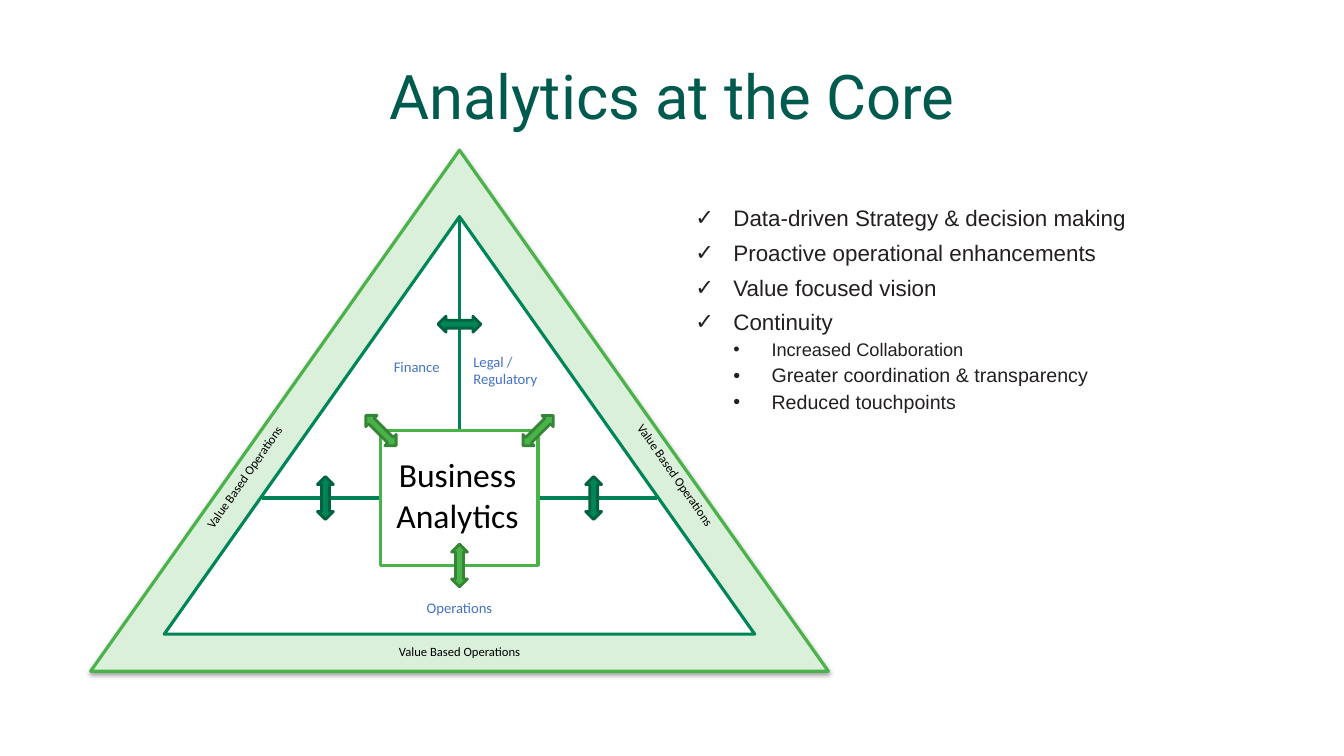
from dataclasses import dataclass

from lxml.etree import SubElement
from pptx import Presentation
from pptx.dml.color import RGBColor
from pptx.enum.shapes import MSO_CONNECTOR, MSO_SHAPE
from pptx.enum.text import MSO_ANCHOR, MSO_AUTO_SIZE, PP_ALIGN
from pptx.oxml.ns import qn
from pptx.util import Cm, Pt


@dataclass(frozen=True)
class Theme:
    """Colours, fonts and type sizes of the slide."""
    title: str = "005B4E"
    body: str = "231F20"
    black: str = "000000"
    white: str = "FFFFFF"
    label: str = "4472C4"
    pale: str = "DAF0DA"
    light: str = "49B349"
    light_edge: str = "368436"
    dark: str = "008557"
    dark_edge: str = "006240"
    divider: str = "008255"
    title_font: str = "Roboto"
    body_font: str = "Arial"
    diagram_font: str = "Calibri"
    title_size: float = 44
    point_size: float = 16
    subpoint_size: float = 14
    first_subpoint_size: float = 13
    core_size: float = 24
    label_size: float = 10.5
    edge_size: float = 9


THEME = Theme()
AXIS, MIDDLE = 11.58, 12.55
CORE_WIDTH, CORE_HEIGHT = 3.96, 3.4
INNER_TOP = 5.46
BENEFITS = [
    ("Data-driven Strategy & decision making", 0, THEME.point_size),
    ("Proactive operational enhancements", 0, THEME.point_size),
    ("Value focused vision", 0, THEME.point_size),
    ("Continuity", 0, THEME.point_size),
    ("Increased Collaboration", 1, THEME.first_subpoint_size),
    ("Greater coordination & transparency", 1, THEME.subpoint_size),
    ("Reduced touchpoints", 1, THEME.subpoint_size),
]


def rgb(colour):
    """Turn a hex string into a colour."""
    return RGBColor.from_string(colour)


def place(part, left, top, width, height):
    """Move and size a part, in centimetres."""
    part.left, part.top = Cm(left), Cm(top)
    part.width, part.height = Cm(width), Cm(height)


def style_runs(paragraph, size, font, colour):
    """Format every run of a paragraph."""
    for run in paragraph.runs:
        run.font.size = Pt(size)
        run.font.name = font
        run.font.color.rgb = rgb(colour)


def add_figure(diagram, kind, centre, size, fill, edge, weight=2.25, turn=0):
    """Add a filled, outlined shape around a centre point."""
    (x, y), (width, height) = centre, size
    figure = diagram.shapes.add_shape(
        kind, Cm(x - width / 2), Cm(y - height / 2), Cm(width), Cm(height))
    figure.shadow.inherit = False
    figure.fill.solid()
    figure.fill.fore_color.rgb = rgb(fill)
    figure.line.color.rgb = rgb(edge)
    figure.line.width = Pt(weight)
    figure.rotation = turn
    return figure


def add_soft_shadow(figure):
    """Give a shape a faint shadow below it."""
    effects = figure._element.spPr.find(qn("a:effectLst"))
    shadow = SubElement(effects, qn("a:outerShdw"), blurRad="40000",
                        dist="20000", dir="5400000", rotWithShape="0")
    black = SubElement(shadow, qn("a:srgbClr"), val=THEME.black)
    SubElement(black, qn("a:alpha"), val="38000")


def add_divider(diagram, start, end):
    """Add a straight dividing line."""
    divider = diagram.shapes.add_connector(
        MSO_CONNECTOR.STRAIGHT, *map(Cm, start + end))
    divider.line.color.rgb = rgb(THEME.divider)
    divider.line.width = Pt(2.25)
    SubElement(divider._element.spPr, qn("a:effectLst"))


def add_label(diagram, text, centre, size, points, colour,
              align=PP_ALIGN.CENTER, turn=0):
    """Add a text label around a centre point."""
    (x, y), (width, height) = centre, size
    label = diagram.shapes.add_textbox(
        Cm(x - width / 2), Cm(y - height / 2), Cm(width), Cm(height))
    label.rotation = turn
    frame = label.text_frame
    frame.word_wrap = True
    frame.auto_size = MSO_AUTO_SIZE.SHAPE_TO_FIT_TEXT
    caption = frame.paragraphs[0]
    caption.text = text
    caption.alignment = align
    style_runs(caption, points, THEME.diagram_font, colour)


def add_bullet(paragraph, mark, indent):
    """Give a paragraph a hanging bullet."""
    properties = paragraph._p.get_or_add_pPr()
    properties.set("marL", str(Cm(indent)))
    properties.set("indent", str(-Cm(0.96)))
    SubElement(properties, qn("a:buFont"), typeface=THEME.body_font)
    SubElement(properties, qn("a:buChar"), char=mark)


def write_title(title):
    """Fill the title placeholder."""
    place(title, 1.7, 1.85, 30.48, 1.55)
    frame = title.text_frame
    frame.text = "Analytics at the Core"
    frame.auto_size = MSO_AUTO_SIZE.NONE
    frame.vertical_anchor = MSO_ANCHOR.BOTTOM
    frame.margin_top = frame.margin_bottom = Cm(0.05)
    heading = frame.paragraphs[0]
    heading.alignment = PP_ALIGN.CENTER
    heading.line_spacing = 0.9
    style_runs(heading, THEME.title_size, THEME.title_font, THEME.title)


def write_benefits(body):
    """Fill the body placeholder with the two-level list."""
    place(body, 17.27, 5.1, 12.34, 10.92)
    frame = body.text_frame
    frame.auto_size = MSO_AUTO_SIZE.NONE
    frame.vertical_anchor = MSO_ANCHOR.TOP
    for index, (text, level, points) in enumerate(BENEFITS):
        benefit = frame.add_paragraph() if index else frame.paragraphs[0]
        benefit.text = text
        benefit.level = level
        add_bullet(benefit, "✓•"[level], 0.96 * (level + 1))
        benefit.line_spacing = 0.9
        benefit.space_before = Pt((7.5, 3.8)[level] if index else 0)
        style_runs(benefit, points, THEME.body_font, THEME.body)


def draw_triangle(diagram):
    """Draw the nested triangles, the dividers and the core."""
    outer = add_figure(diagram, MSO_SHAPE.ISOSCELES_TRIANGLE, (AXIS, 10.35),
                       (18.59, 13.13), THEME.pale, THEME.light)
    add_soft_shadow(outer)
    add_figure(diagram, MSO_SHAPE.ISOSCELES_TRIANGLE,
               (AXIS, INNER_TOP + 5.26), (14.88, 10.52),
               THEME.white, THEME.dark)
    add_divider(diagram, (AXIS - 4.98, MIDDLE), (AXIS + 4.98, MIDDLE))
    add_divider(diagram, (AXIS, MIDDLE), (AXIS, INNER_TOP))
    add_figure(diagram, MSO_SHAPE.RECTANGLE, (AXIS, MIDDLE),
               (CORE_WIDTH, CORE_HEIGHT), THEME.white, THEME.light)


def draw_labels(diagram):
    """Write the core, the three departments and the three edges."""
    add_label(diagram, "Business Analytics", (11.53, 12.48), (3.66, 2.31),
              THEME.core_size, THEME.black)
    for text, centre, size, align in (
            ("Finance", (9.5, 9.23), (3.66, 0.69), PP_ALIGN.RIGHT),
            ("Legal / \vRegulatory", (13.51, 9.32), (3.66, 1.12),
             PP_ALIGN.LEFT),
            ("Operations", (AXIS, 15.3), (8.61, 0.69), PP_ALIGN.CENTER)):
        add_label(diagram, text, centre, size, THEME.label_size,
                  THEME.label, align)
    for centre, turn in (((6.2, 12.05), 305), ((16.98, 12), 55),
                         ((AXIS, 16.47), 0)):
        add_label(diagram, "Value Based Operations", centre, (12.45, 0.74),
                  THEME.edge_size, THEME.black, turn=turn)


def draw_arrows(diagram):
    """Draw light arrows around the core and dark ones on the dividers."""
    core_top = MIDDLE - CORE_HEIGHT / 2
    core_arrows = [(-CORE_WIDTH / 2, core_top, 45),
                   (CORE_WIDTH / 2, core_top, 135),
                   (0, MIDDLE + CORE_HEIGHT / 2, 90)]
    divider_arrows = [(-3.38, MIDDLE, 90), (3.38, MIDDLE, 90), (0, 8.17, 0)]
    for arrows, fill, edge in (
            (core_arrows, THEME.light, THEME.light_edge),
            (divider_arrows, THEME.dark, THEME.dark_edge)):
        for offset, y, turn in arrows:
            add_figure(diagram, MSO_SHAPE.LEFT_RIGHT_ARROW,
                       (AXIS + offset, y), (1.08, 0.4), fill, edge, 2, turn)


def main():
    """Build the slide and save it."""
    deck = Presentation()
    deck.slide_width, deck.slide_height = Cm(33.87), Cm(19.05)
    slide = deck.slides.add_slide(deck.slide_layouts[1])
    write_title(slide.shapes.title)
    write_benefits(slide.placeholders[1])
    diagram = slide.shapes.add_group_shape()
    draw_triangle(diagram)
    draw_labels(diagram)
    draw_arrows(diagram)
    deck.save("out.pptx")


if __name__ == "__main__":
    main()
